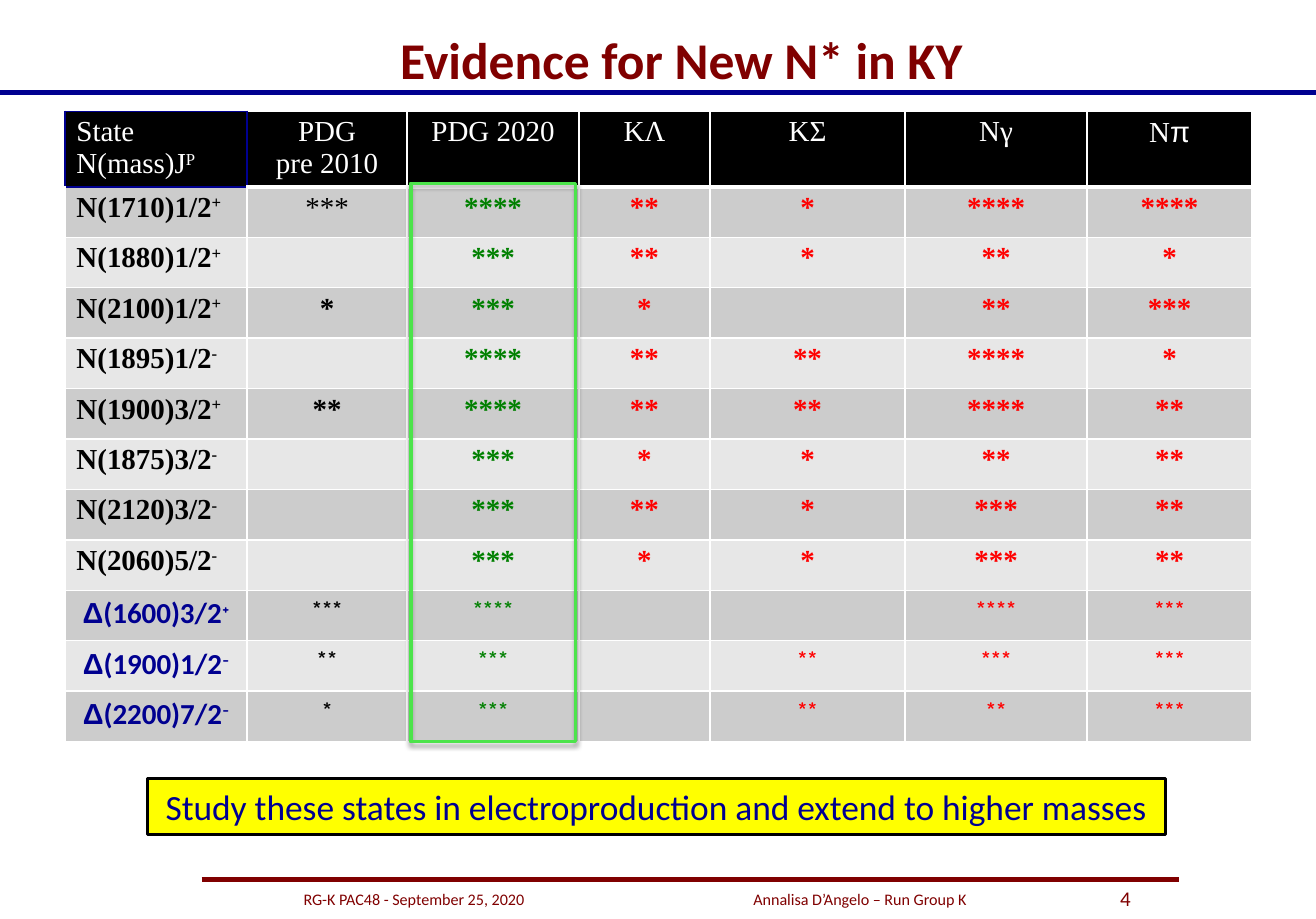
from lxml import etree
from pptx import Presentation
from pptx.dml.color import RGBColor
from pptx.enum.shapes import MSO_CONNECTOR, MSO_SHAPE
from pptx.enum.text import MSO_ANCHOR, PP_ALIGN
from pptx.oxml.ns import qn
from pptx.util import Emu, Inches, Pt

LEFT, CENTER, RIGHT = PP_ALIGN.LEFT, PP_ALIGN.CENTER, PP_ALIGN.RIGHT
TOP, MIDDLE = MSO_ANCHOR.TOP, MSO_ANCHOR.MIDDLE
RECTANGLE, STRAIGHT = MSO_SHAPE.RECTANGLE, MSO_CONNECTOR.STRAIGHT
WIDTH, HEIGHT = Inches(11.35), Inches(7.93)
MAROON, NAVY, BLACK, WHITE = "800000", "000090", "000000", "FFFFFF"
GREEN, RED, YELLOW, FRAME_GREEN = "008000", "FF0000", "FFFF00", "4CE44B"
BANDS = ("CCCCCC", "E7E7E7")
SANS, SERIF, GREEK, COMIC = "Calibri", "Times New Roman", "Arial", "Comic Neue"

COLUMN_WEIGHTS = (1.57, 1.38, 1.48, 1.13, 1.68, 1.57, 1.42)
HEADER_SHARE = 0.12
STAR_COLORS = (BLACK, GREEN, RED, RED, RED, RED)
HEADERS = (
    [[("State", SERIF)], [("N(mass)J", SERIF), ("P", SERIF, True)]],
    [[("PDG", SERIF)], [("pre 2010", SERIF)]],
    [[("PDG 2020", SERIF)]],
    [[("KΛ", SERIF)]],
    [[("KΣ", SERIF)]],
    [[("Nγ", SERIF)]],
    [[("N", SERIF), ("π", GREEK)]],
)
STATES = (
    ("N", "(1710)1/2", "+", (3, 4, 2, 1, 4, 4)),
    ("N", "(1880)1/2", "+", (0, 3, 2, 1, 2, 1)),
    ("N", "(2100)1/2", "+", (1, 3, 1, 0, 2, 3)),
    ("N", "(1895)1/2", "-", (0, 4, 2, 2, 4, 1)),
    ("N", "(1900)3/2", "+", (2, 4, 2, 2, 4, 2)),
    ("N", "(1875)3/2", "-", (0, 3, 1, 1, 2, 2)),
    ("N", "(2120)3/2", "-", (0, 3, 2, 1, 3, 2)),
    ("N", "(2060)5/2", "-", (0, 3, 1, 1, 3, 2)),
    ("Δ", "(1600)3/2", "+", (3, 4, 0, 0, 4, 3)),
    ("Δ", "(1900)1/2", "-", (2, 3, 0, 2, 3, 3)),
    ("Δ", "(2200)7/2", "-", (1, 3, 0, 2, 2, 3)),
)


def color(code):
    """Turn a hex string into a colour."""
    return RGBColor.from_string(code)


def percent_box(left, top, width, height):
    """Turn percentages of the slide into a box of lengths."""
    return tuple(Emu(round(share * side / 100)) for share, side in
                 zip((left, top, width, height), (WIDTH, HEIGHT) * 2))


def add_run(paragraph, text, size, code, font=SANS, bold=False, raised=False):
    """Append one formatted run."""
    run = paragraph.add_run()
    run.text = text
    run.font.size, run.font.name, run.font.bold = Pt(size), font, bold
    run.font.color.rgb = color(code)
    if raised:
        run.font._element.set("baseline", "30000")


def add_label(slide, box, text, size, code, align, anchor=MIDDLE, bold=False, tab=None):
    """Place a one-line text box, with an optional tab stop."""
    frame = slide.shapes.add_textbox(*box).text_frame
    frame.word_wrap, frame.vertical_anchor = True, anchor
    paragraph = frame.paragraphs[0]
    paragraph.alignment = align
    if tab:
        stops = etree.SubElement(paragraph._p.get_or_add_pPr(), qn("a:tabLst"))
        etree.SubElement(stops, qn("a:tab"), pos=str(tab), algn="l")
    add_run(paragraph, text, size, code, bold=bold)


def add_rule(slide, box, code):
    """Draw a horizontal rule along the top of a box."""
    left, top, width, _ = box
    rule = slide.shapes.add_connector(STRAIGHT, left, top, left + width, top)
    rule.line.color.rgb, rule.line.width = color(code), Pt(3)
    etree.SubElement(rule._element.spPr, qn("a:effectLst"))


def add_rectangle(slide, box, line_code, line_width):
    """Draw an unfilled, shadowless rectangle."""
    shape = slide.shapes.add_shape(RECTANGLE, *box)
    shape.shadow.inherit = False
    shape.fill.background()
    shape.line.color.rgb, shape.line.width = color(line_code), Pt(line_width)
    return shape


def set_borders(cell, **edges):
    """Set cell borders from (colour, points) pairs."""
    for side in "LRTB":
        code, points = edges.get(side, (WHITE, 1))
        line = etree.SubElement(cell._tc.get_or_add_tcPr(), qn(f"a:ln{side}"), w=str(Pt(points)))
        fill = etree.SubElement(line, qn("a:solidFill"))
        etree.SubElement(fill, qn("a:srgbClr"), val=code)


def fill_header(cells):
    """Write the header row."""
    for index, (cell, lines) in enumerate(zip(cells, HEADERS)):
        if index == 0:
            set_borders(cell, **dict.fromkeys("LRTB", (NAVY, 1)))
        else:
            set_borders(cell, L=(NAVY if index == 1 else WHITE, 1), B=(WHITE, 3))
        cell.fill.solid()
        cell.fill.fore_color.rgb = color(BLACK)
        cell.margin_top = cell.margin_bottom = Inches(0.04)
        for number, runs in enumerate(lines):
            frame = cell.text_frame
            paragraph = frame.add_paragraph() if number else frame.paragraphs[0]
            paragraph.alignment = CENTER if index else LEFT
            for text, font, *raised in runs:
                add_run(paragraph, text, 18, WHITE, font, raised=bool(raised))


def fill_state(cells, row, state):
    """Write one resonance with its star ratings."""
    symbol, quantum, parity, ratings = state
    nucleon = symbol == "N"
    for index, cell in enumerate(cells):
        set_borders(cell, T=(NAVY, 1) if (row, index) == (0, 0) else (WHITE, 1))
        cell.fill.solid()
        cell.fill.fore_color.rgb = color(BANDS[row % 2])
        cell.margin_top = cell.margin_bottom = Inches(0.04 if nucleon else 0.05)
        paragraph = cell.text_frame.paragraphs[0]
        paragraph.alignment = CENTER if index or not nucleon else LEFT
        if index and ratings[index - 1]:
            bold = nucleon and (row, index) != (0, 1)
            add_run(paragraph, "*" * ratings[index - 1], 18 if nucleon else 16,
                    STAR_COLORS[index - 1], SERIF if nucleon else COMIC, bold)
    paragraph = cells[0].text_frame.paragraphs[0]
    if nucleon:
        add_run(paragraph, symbol + quantum, 18, BLACK, SERIF, True)
        add_run(paragraph, parity, 18, BLACK, SERIF, True, True)
    else:
        add_run(paragraph, symbol, 18, NAVY, GREEK, True)
        add_run(paragraph, quantum, 18, NAVY, SANS, True)
        add_run(paragraph, parity, 18, NAVY, COMIC, True, True)


def add_evidence_table(slide, box):
    """Place the star-rating table in a box."""
    left, top, width, height = box
    table = slide.shapes.add_table(len(STATES) + 1, len(HEADERS), *box).table
    table.first_row = table.horz_banding = False
    for column, weight in zip(table.columns, COLUMN_WEIGHTS):
        column.width = round(width * weight / sum(COLUMN_WEIGHTS))
    header_height = round(height * HEADER_SHARE)
    for index, row in enumerate(table.rows):
        row.height = round((height - header_height) / len(STATES)) if index else header_height
    header, *body = table.rows
    fill_header(list(header.cells))
    for index, (row, state) in enumerate(zip(body, STATES)):
        fill_state(list(row.cells), index, state)


def add_column_frame(slide, box):
    """Frame the ratings in the third column of the table box."""
    left, top, width, height = box
    unit = width / sum(COLUMN_WEIGHTS)
    gap = Inches(0.03)
    frame_left = round(left + sum(COLUMN_WEIGHTS[:2]) * unit) + gap
    frame_width = round(COLUMN_WEIGHTS[2] * unit) - 2 * gap
    frame_top = top + round(height * HEADER_SHARE) - gap
    shape = add_rectangle(slide, (frame_left, frame_top, frame_width, top + height - frame_top),
                          FRAME_GREEN, 2.25)
    effects = shape._element.spPr.find(qn("a:effectLst"))
    shadow = etree.SubElement(effects, qn("a:outerShdw"), blurRad=str(Pt(3.1)),
                              dist=str(Pt(1.8)), dir="5400000", rotWithShape="0")
    shade = etree.SubElement(shadow, qn("a:srgbClr"), val=BLACK)
    etree.SubElement(shade, qn("a:alpha"), val="35000")


def add_banner(slide, box):
    """Place the yellow conclusion banner."""
    shape = add_rectangle(slide, box, BLACK, 2)
    shape.fill.solid()
    shape.fill.fore_color.rgb = color(YELLOW)
    frame = shape.text_frame
    frame.word_wrap, frame.vertical_anchor = False, MIDDLE
    paragraph = frame.paragraphs[0]
    paragraph.alignment = CENTER
    add_run(paragraph, "Study these states in electroproduction and extend to higher masses", 22, NAVY)


def main():
    """Build and save the slide."""
    presentation = Presentation()
    presentation.slide_width, presentation.slide_height = WIDTH, HEIGHT
    slide = presentation.slides.add_slide(presentation.slide_layouts[6])
    table_box = percent_box(4.93, 12.11, 90.22, 68.6)
    add_rule(slide, percent_box(15.33, 95.71, 74.27, 0), MAROON)
    add_evidence_table(slide, table_box)
    add_label(slide, percent_box(5.02, 1.39, 93.57, 9.96), "Evidence for New N* in KY",
              32, MAROON, CENTER, bold=True)
    add_label(slide, percent_box(81.94, 95.71, 4.85, 4.16), "4", 13, MAROON, RIGHT, TOP)
    add_banner(slide, percent_box(11.19, 84.74, 77.36, 6.05))
    add_column_frame(slide, table_box)
    add_rule(slide, percent_box(0, 10.09, 100, 0), NAVY)
    add_label(slide, percent_box(22.2, 95.71, 58.3, 4.29),
              "RG-K PAC48 - September 25, 2020\tAnnalisa D’Angelo – Run Group K",
              10, MAROON, LEFT, tab=Inches(3.88))
    presentation.save("out.pptx")


if __name__ == "__main__":
    main()
